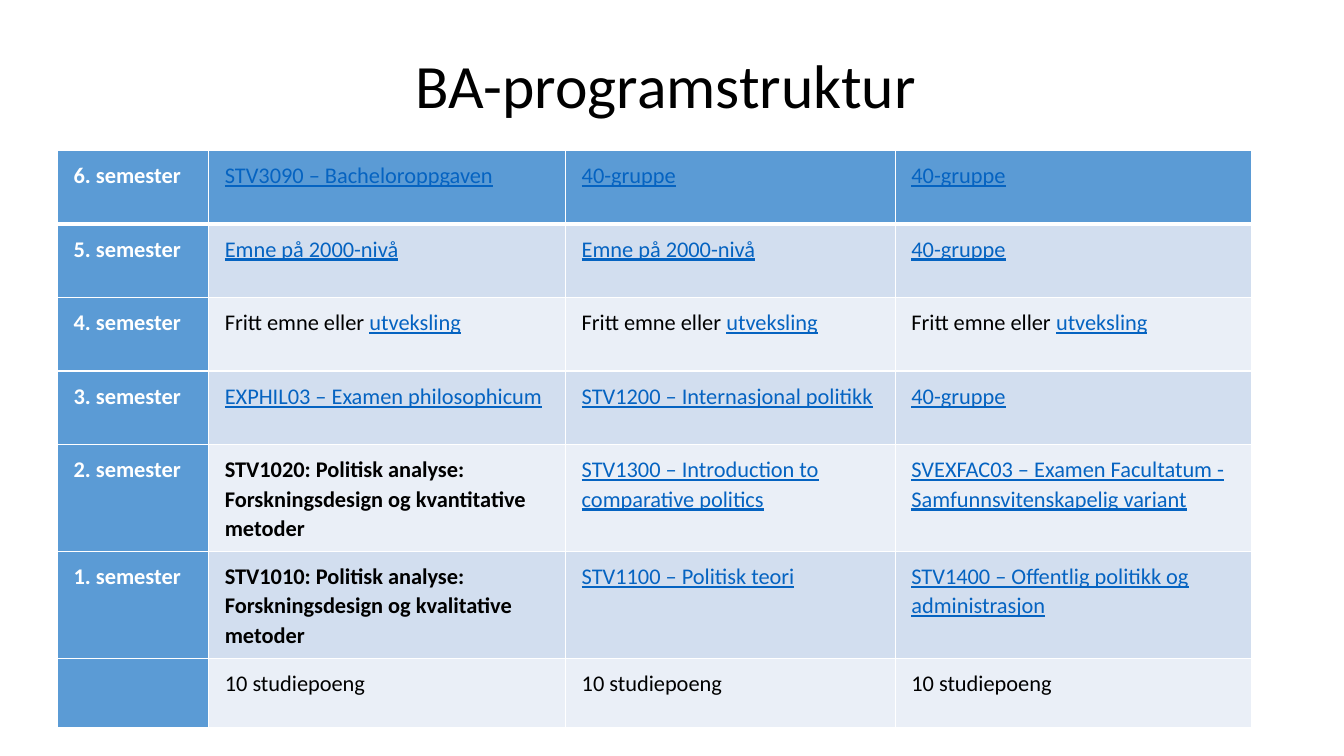
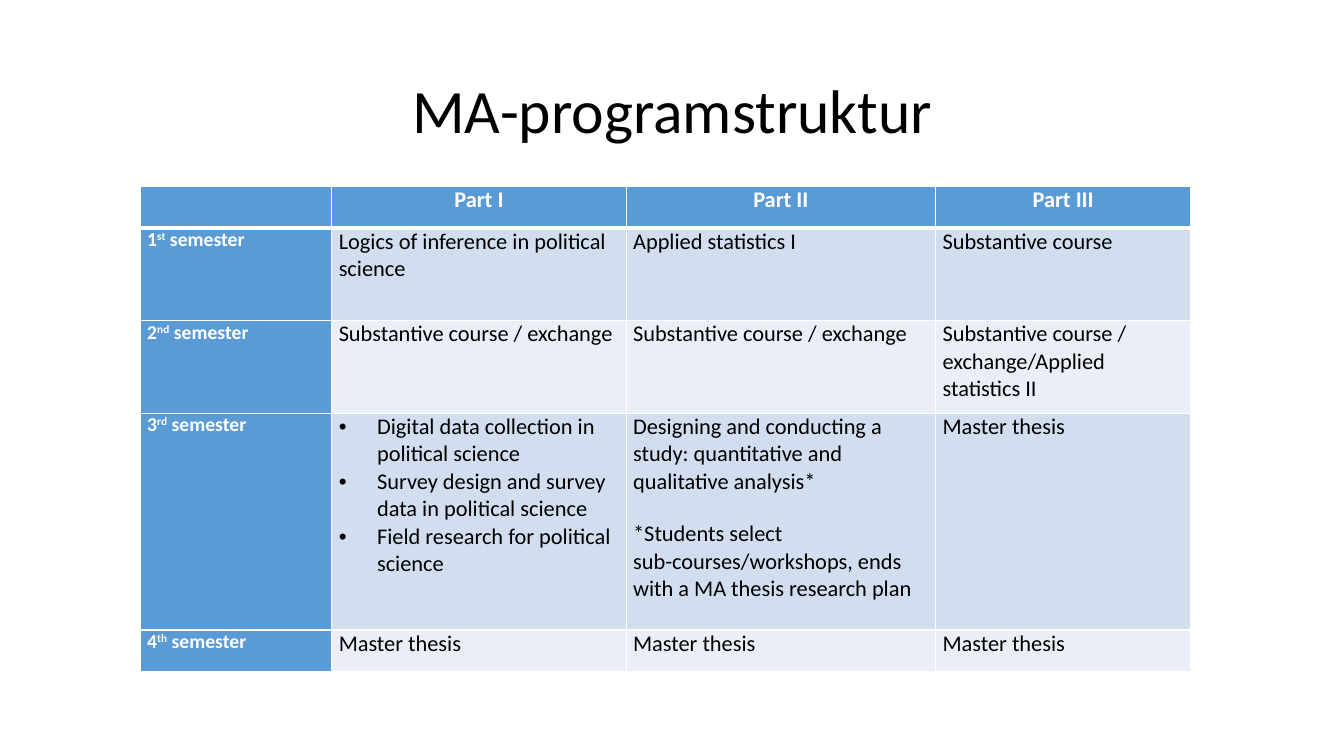
from lxml import etree
from pptx import Presentation
from pptx.dml.color import RGBColor
from pptx.enum import text
from pptx.oxml import ns
from pptx.util import Inches, Pt

FONT = "Calibri"
BLACK = RGBColor(0x00, 0x00, 0x00)
WHITE = RGBColor(0xFF, 0xFF, 0xFF)
BLUE = RGBColor(0x5B, 0x9B, 0xD5)
LINK_BLUE = RGBColor(0x05, 0x63, 0xC1)
BANDS = [RGBColor(0xD2, 0xDE, 0xEF), RGBColor(0xEA, 0xEF, 0xF7)]

# Run styles: colour, bold, underline, superscript
PLAIN = (BLACK, False, False, False)
STRONG = (BLACK, True, False, False)
LINK = (LINK_BLUE, False, True, False)
HEADING = (WHITE, True, False, False)
ORDINAL = (WHITE, True, False, True)


# A cell is a list of paragraphs, and a paragraph is a list of (words, style)
def cell_of(words, style=PLAIN):
    return [[(words, style)]]


def link(words):
    return cell_of(words, LINK)


def heading(words):
    return cell_of(words, HEADING)


def ordinal_semester(number, suffix):
    return [[(number, HEADING), (suffix, ORDINAL), (" semester", HEADING)]]


EMPTY = []
GROUP = link("40-gruppe")
LEVEL_2000 = link("Emne på 2000-nivå")
FREE_COURSE = [[("Fritt emne eller ", PLAIN), ("utveksling", LINK)]]
CREDITS = cell_of("10 studiepoeng")
EXCHANGE = cell_of("Substantive course / exchange")
THESIS = cell_of("Master thesis")

BACHELOR = {
    "title": "BA-programstruktur",
    "title_box": (0.92, 0.4, 11.37, 0.96),
    "origin": (0.57, 1.49),
    "columns": [1.5, 3.54, 3.27, 3.53],
    "heights": [0.73, 0.73, 0.73, 0.73, 1.06, 1.06, 0.69],
    "margins": (0.16, 0.1, 0.16, 0.06),
    "line_spacing": 1.07,
    "label_size": 16,
    "rows": [
        [heading("6. semester"), link("STV3090 – Bacheloroppgaven"), GROUP, GROUP],
        [heading("5. semester"), LEVEL_2000, LEVEL_2000, GROUP],
        [heading("4. semester"), FREE_COURSE, FREE_COURSE, FREE_COURSE],
        [heading("3. semester"), link("EXPHIL03 – Examen philosophicum"),
         link("STV1200 – Internasjonal politikk"), GROUP],
        [heading("2. semester"),
         cell_of("STV1020: Politisk analyse: Forskningsdesign og kvantitative metoder", STRONG),
         link("STV1300 – Introduction to comparative politics"),
         link("SVEXFAC03 – Examen Facultatum - Samfunnsvitenskapelig variant")],
        [heading("1. semester"),
         cell_of("STV1010: Politisk analyse: Forskningsdesign og kvalitative metoder", STRONG),
         link("STV1100 – Politisk teori"),
         link("STV1400 – Offentlig politikk og administrasjon")],
        [EMPTY, CREDITS, CREDITS, CREDITS],
    ],
}

MASTER = {
    "title": "MA-programstruktur",
    "title_box": (0.92, 0.4, 11.5, 1.45),
    "origin": (1.39, 1.85),
    "columns": [1.9, 2.92, 3.07, 2.53],
    "heights": [0.41, 0.92, 0.92, 2.15, 0.41],
    "margins": (0.07, 0, 0.07, 0),
    "line_spacing": 1.0,
    "label_size": 14,
    "centred_row": 0,
    "bulleted_cell": (3, 1),
    "rows": [
        [EMPTY, heading("Part I"), heading("Part II"), heading("Part III")],
        [ordinal_semester("1", "st"), cell_of("Logics of inference in political science"),
         cell_of("Applied statistics I"), cell_of("Substantive course")],
        [ordinal_semester("2", "nd"), EXCHANGE, EXCHANGE,
         cell_of("Substantive course / exchange/Applied statistics II")],
        [ordinal_semester("3", "rd"),
         [[("Digital data collection in political science", PLAIN)],
          [("Survey design and survey data in political science", PLAIN)],
          [("Field research for political science", PLAIN)]],
         [[("Designing and conducting a study: quantitative and qualitative analysis*", PLAIN)],
          [("*Students select sub-courses/workshops, ends with a MA thesis research plan",
            PLAIN)]],
         THESIS],
        [ordinal_semester("4", "th"), THESIS, THESIS, THESIS],
    ],
}


def add_title(slide, words, box):
    title = slide.shapes.title
    title.left, title.top, title.width, title.height = map(Inches, box)
    frame = title.text_frame
    frame.text = words
    frame.vertical_anchor = text.MSO_ANCHOR.MIDDLE
    paragraph = frame.paragraphs[0]
    paragraph.alignment = text.PP_ALIGN.CENTER
    paragraph.line_spacing = 0.9
    paragraph.font.name = FONT
    paragraph.font.size = Pt(44)
    paragraph.font.color.rgb = BLACK


def set_borders(cell, top, bottom):
    properties = cell._tc.get_or_add_tcPr()
    for side, width in (("L", 1), ("R", 1), ("T", top), ("B", bottom)):
        line = etree.SubElement(properties, ns.qn("a:ln" + side), w=str(Pt(width)))
        fill = etree.SubElement(line, ns.qn("a:solidFill"))
        etree.SubElement(fill, ns.qn("a:srgbClr"), val=str(WHITE))


def add_bullet(paragraph):
    properties = paragraph._p.get_or_add_pPr()
    indent = Inches(0.38)
    properties.set("marL", str(indent))
    properties.set("indent", str(-indent))
    etree.SubElement(properties, ns.qn("a:buFont"), typeface="Arial")
    etree.SubElement(properties, ns.qn("a:buChar"), char="•")


def add_run(paragraph, words, style):
    color, bold, underline, superscript = style
    run = paragraph.add_run()
    run.text = words
    run.font.color.rgb = color
    run.font.bold = bold
    run.font.underline = underline
    if superscript:
        run._r.get_or_add_rPr().set("baseline", "30000")


def fill_cell(cell, paragraphs, size, line_spacing, centred, bulleted):
    frame = cell.text_frame
    for index, runs in enumerate(paragraphs):
        paragraph = frame.add_paragraph() if index else frame.paragraphs[0]
        paragraph.line_spacing = line_spacing
        if centred:
            paragraph.alignment = text.PP_ALIGN.CENTER
        if bulleted:
            add_bullet(paragraph)
        elif index:
            paragraph.space_before = Pt(18)
        paragraph.font.name = FONT
        paragraph.font.size = Pt(size)
        for words, style in runs:
            add_run(paragraph, words, style)


def add_programme_table(slide, programme):
    columns, heights = programme["columns"], programme["heights"]
    left, top = programme["origin"]
    table = slide.shapes.add_table(
        len(heights), len(columns), Inches(left), Inches(top),
        Inches(sum(columns)), Inches(sum(heights))).table
    table.first_row = table.horz_banding = False
    for column, width in zip(table.columns, columns):
        column.width = Inches(width)
    for row, height in zip(table.rows, heights):
        row.height = Inches(height)

    for r, row in enumerate(programme["rows"]):
        for c, paragraphs in enumerate(row):
            cell = table.cell(r, c)
            (cell.margin_left, cell.margin_top, cell.margin_right,
             cell.margin_bottom) = map(Inches, programme["margins"])
            # A thick rule separates the first row from the rest
            set_borders(cell, 3 if r == 1 else 1, 3 if r == 0 else 1)
            cell.fill.solid()
            cell.fill.fore_color.rgb = BLUE if r == 0 or c == 0 else BANDS[(r - 1) % 2]
            fill_cell(cell, paragraphs,
                      programme["label_size"] if c == 0 else 16,
                      programme["line_spacing"],
                      r == programme.get("centred_row"),
                      (r, c) == programme.get("bulleted_cell"))


def main():
    presentation = Presentation()
    presentation.slide_width = Inches(13.33)
    presentation.slide_height = Inches(7.5)
    title_only = presentation.slide_layouts[5]
    for programme in (BACHELOR, MASTER):
        slide = presentation.slides.add_slide(title_only)
        add_title(slide, programme["title"], programme["title_box"])
        add_programme_table(slide, programme)
    presentation.save("out.pptx")


if __name__ == "__main__":
    main()
